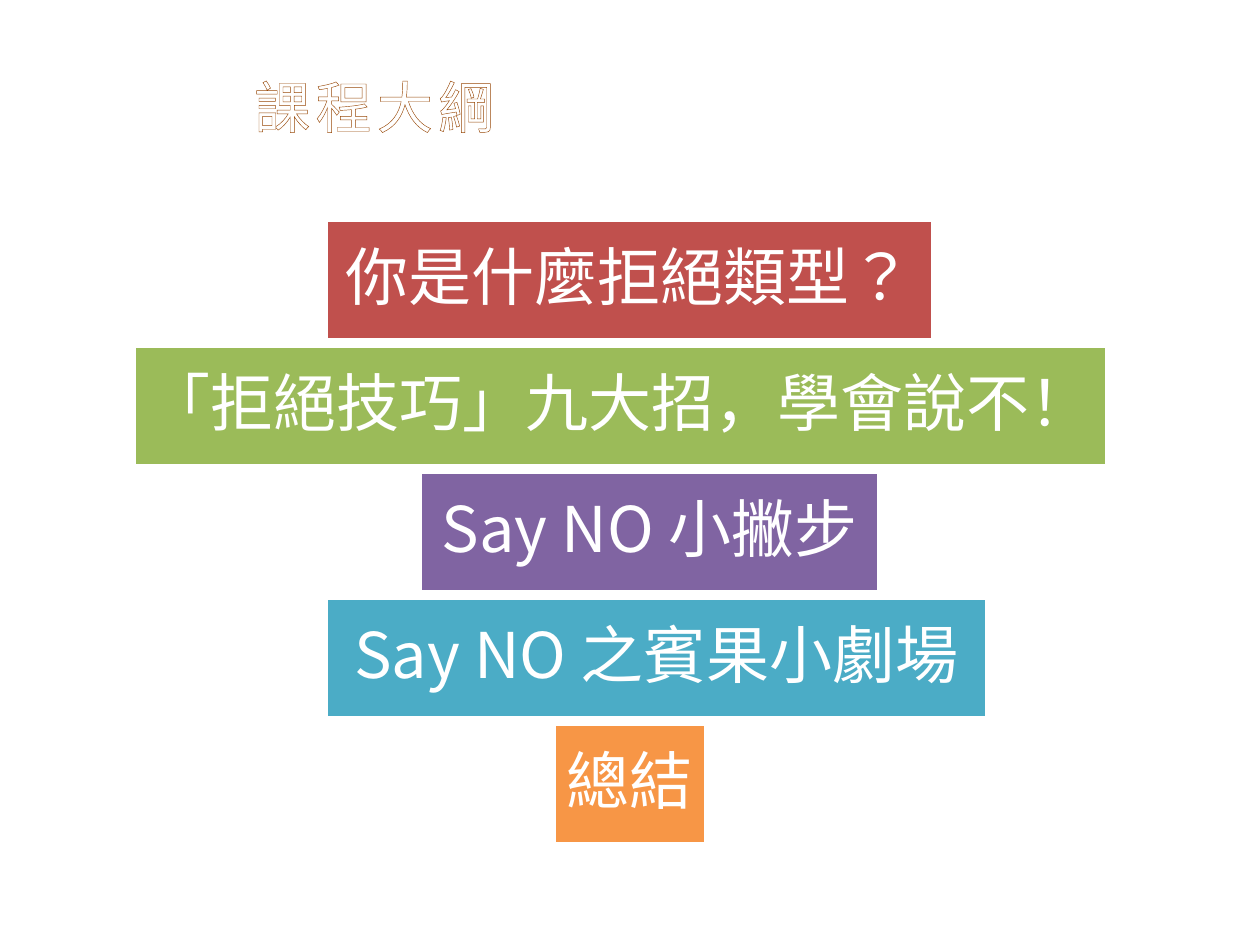
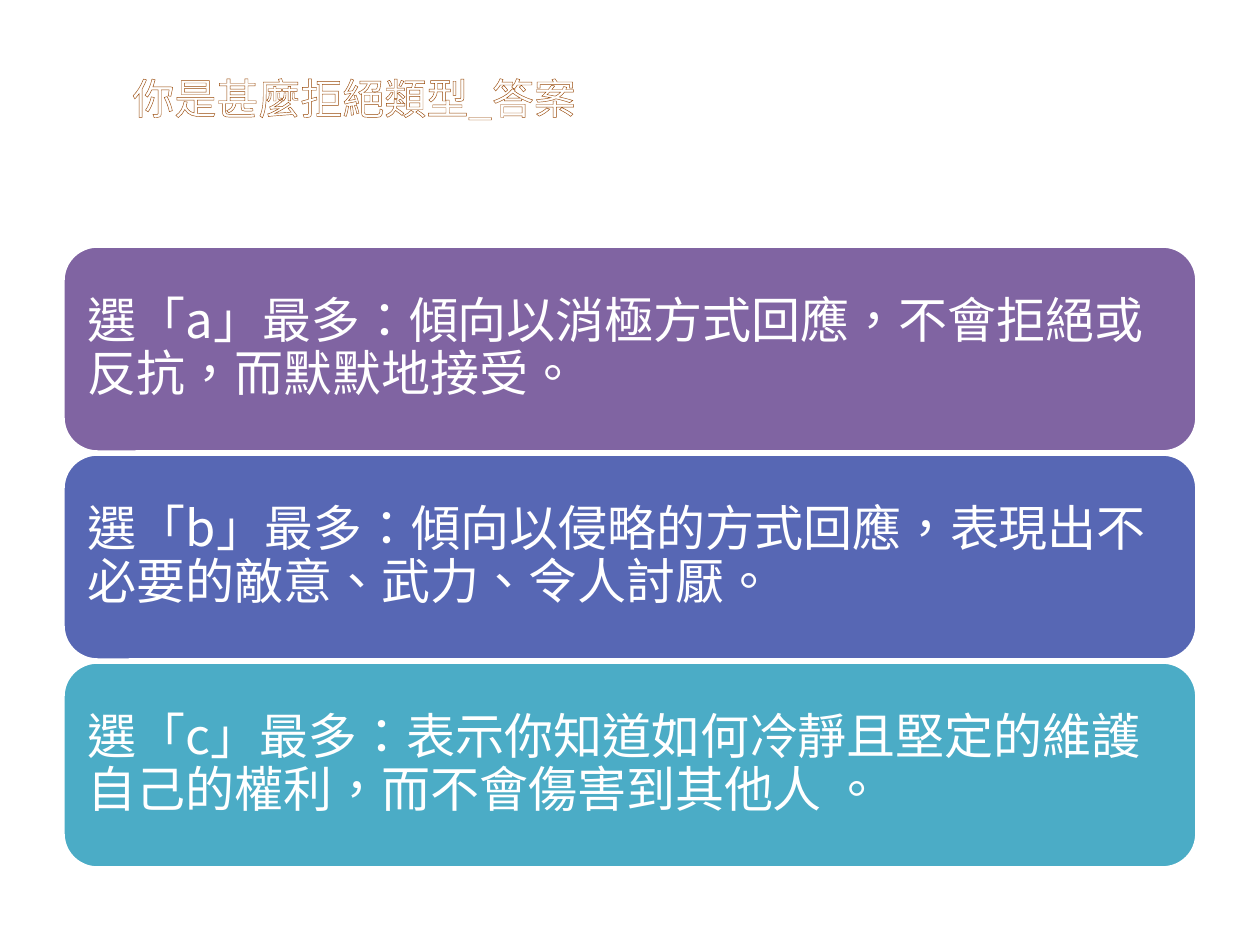
from dataclasses import dataclass

from lxml import etree
from pptx import Presentation
from pptx import util as u
from pptx.dml.color import RGBColor
from pptx.enum import shapes, text
from pptx.oxml.ns import qn

PX_PER_INCH = 126


@dataclass(frozen=True)
class Theme:
    white: str = "FFFFFF"
    outline: str = "984807"
    red: str = "C0504D"
    green: str = "9BBB59"
    purple: str = "8064A2"
    indigo: str = "5767B4"
    teal: str = "4BACC6"
    orange: str = "F79646"
    title_font: str = "Noto Sans CJK JP"
    body_font: str = "Noto Sans CJK SC"
    outline_width: float = 0.8
    border_width: int = 2
    band_size: int = 36
    answer_size: int = 28
    panel_spacing: float = 0.9


THEME = Theme()


@dataclass(frozen=True)
class Box:
    left: int
    top: int
    width: int
    height: int


@dataclass(frozen=True)
class Title:
    words: str
    box: Box
    size: int
    tracking: int = 0


@dataclass(frozen=True)
class Topic:
    words: str
    left: int
    width: int
    color: str
    language: str = "zh-TW"


@dataclass(frozen=True)
class Answer:
    words: str
    color: str


@dataclass(frozen=True)
class PanelStyle:
    preset: shapes.MSO_SHAPE
    size: int
    inset: int
    alignment: text.PP_ALIGN


TOPIC_TOP, TOPIC_HEIGHT, TOPIC_PITCH = 220, 120, 126
ANSWER_LEFT, ANSWER_WIDTH = 63, 1134
ANSWER_TOP, ANSWER_HEIGHT, ANSWER_PITCH = 246, 206, 208

TOPIC_STYLE = PanelStyle(
    shapes.MSO_SHAPE.RECTANGLE, THEME.band_size, 12, text.PP_ALIGN.CENTER
)
ANSWER_STYLE = PanelStyle(
    shapes.MSO_SHAPE.ROUNDED_RECTANGLE, THEME.answer_size, 15, text.PP_ALIGN.LEFT
)

OUTLINE_TITLE = Title("課程大綱", Box(242, 66, 273, 81), 32, 3)
ANSWERS_TITLE = Title("你是甚麼拒絕類型_答案", Box(120, 66, 485, 63), 24)

TOPICS = (
    Topic("你是什麼拒絕類型？", 326, 607, THEME.red),
    Topic("「拒絕技巧」九大招，學會說不！", 134, 973, THEME.green, "zh-CN"),
    Topic("Say NO 小撇步", 420, 459, THEME.purple),
    Topic("Say NO 之賓果小劇場", 326, 661, THEME.teal),
    Topic("總結", 554, 152, THEME.orange),
)

ANSWERS = (
    Answer("選「a」最多：傾向以消極方式回應，不會拒絕或反抗，而默默地接受。", THEME.purple),
    Answer(
        "選「b」最多：傾向以侵略的方式回應，表現出不必要的敵意、武力、令人討厭。",
        THEME.indigo,
    ),
    Answer(
        "選「c」最多：表示你知道如何冷靜且堅定的維護自己的權利，而不會傷害到其他人 。",
        THEME.teal,
    ),
)


def px(length: int) -> u.Emu:
    return u.Emu(round(length * 914400 / PX_PER_INCH))


def place(box: Box) -> tuple[u.Emu, ...]:
    return px(box.left), px(box.top), px(box.width), px(box.height)


def style_paragraph(paragraph, size: int, typeface: str, language: str):
    font = paragraph.font
    font.size = u.Pt(size)
    font.name = typeface
    font.color.rgb = RGBColor.from_string(THEME.white)
    properties = paragraph._p.pPr.find(qn("a:defRPr"))
    properties.set("lang", language)
    etree.SubElement(properties, qn("a:ea"), typeface=typeface)
    return properties


def add_title(slide, title: Title) -> None:
    shape = slide.shapes.add_textbox(*place(title.box))
    shape.text_frame.word_wrap = True
    paragraph = shape.text_frame.paragraphs[0]
    paragraph.text = title.words
    properties = style_paragraph(paragraph, title.size, THEME.title_font, "zh-TW")
    if title.tracking:
        properties.set("spc", str(title.tracking * 100))
    line = etree.Element(qn("a:ln"), w=str(u.Pt(THEME.outline_width)))
    fill = etree.SubElement(line, qn("a:solidFill"))
    etree.SubElement(fill, qn("a:srgbClr"), val=THEME.outline)
    properties.insert(0, line)


def add_panel(
    slide, words: str, box: Box, color: str, style: PanelStyle, language: str = "zh-TW"
) -> None:
    shape = slide.shapes.add_shape(style.preset, *place(box))
    shape.shadow.inherit = False
    shape.fill.solid()
    shape.fill.fore_color.rgb = RGBColor.from_string(color)
    shape.line.color.rgb = RGBColor.from_string(THEME.white)
    shape.line.width = u.Pt(THEME.border_width)
    frame = shape.text_frame
    frame.word_wrap = True
    frame.vertical_anchor = text.MSO_ANCHOR.MIDDLE
    frame.margin_left = frame.margin_right = px(style.inset)
    frame.margin_top = frame.margin_bottom = px(style.inset)
    paragraph = frame.paragraphs[0]
    paragraph.text = words
    paragraph.alignment = style.alignment
    paragraph.line_spacing = THEME.panel_spacing
    style_paragraph(paragraph, style.size, THEME.body_font, language)


def add_slide(presentation, title: Title):
    slide = presentation.slides.add_slide(presentation.slide_layouts[6])
    add_title(slide, title)
    return slide


def build_outline(presentation) -> None:
    slide = add_slide(presentation, OUTLINE_TITLE)
    for row, topic in enumerate(TOPICS):
        box = Box(topic.left, TOPIC_TOP + row * TOPIC_PITCH, topic.width, TOPIC_HEIGHT)
        add_panel(slide, topic.words, box, topic.color, TOPIC_STYLE, topic.language)


def build_answers(presentation) -> None:
    slide = add_slide(presentation, ANSWERS_TITLE)
    for row, answer in enumerate(ANSWERS):
        box = Box(ANSWER_LEFT, ANSWER_TOP + row * ANSWER_PITCH, ANSWER_WIDTH, ANSWER_HEIGHT)
        add_panel(slide, answer.words, box, answer.color, ANSWER_STYLE)


def main() -> None:
    presentation = Presentation()
    presentation.slide_width = px(1260)
    presentation.slide_height = px(945)
    build_outline(presentation)
    build_answers(presentation)
    presentation.save("out.pptx")


if __name__ == "__main__":
    main()
